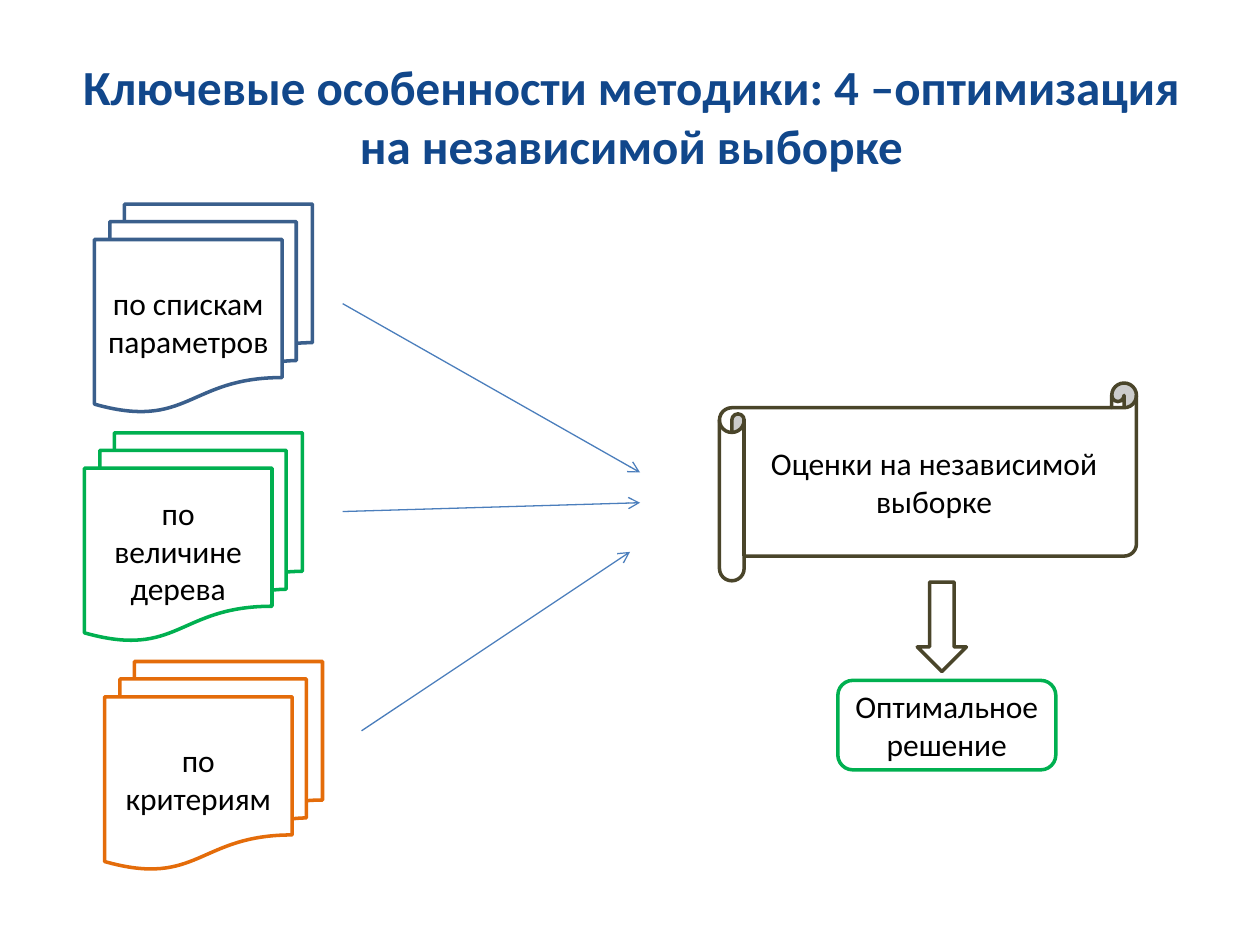
from lxml import etree
from pptx import Presentation
from pptx.dml.color import RGBColor
from pptx.enum.shapes import MSO_CONNECTOR, MSO_SHAPE
from pptx.enum.text import MSO_ANCHOR, PP_ALIGN
from pptx.oxml.ns import qn
from pptx.util import Inches, Pt

DOCUMENTS = MSO_SHAPE.FLOWCHART_MULTIDOCUMENT
SCROLL = MSO_SHAPE.HORIZONTAL_SCROLL
DOWN_ARROW = MSO_SHAPE.DOWN_ARROW
ROUNDED = MSO_SHAPE.ROUNDED_RECTANGLE
STRAIGHT = MSO_CONNECTOR.STRAIGHT
MIDDLE = MSO_ANCHOR.MIDDLE
CENTER = PP_ALIGN.CENTER

THEME = {
    "font": "Calibri",
    "title_size": Pt(28),
    "body_size": Pt(18),
    "outline": Pt(2),
    "arrow_width": Pt(0.75),
    "title": RGBColor.from_string("11478B"),
    "text": RGBColor.from_string("000000"),
    "paper": RGBColor.from_string("FFFFFF"),
    "blue": RGBColor.from_string("3A5F8C"),
    "green": RGBColor.from_string("00B050"),
    "orange": RGBColor.from_string("E46C0A"),
    "brown": RGBColor.from_string("4A452A"),
    "arrow": RGBColor.from_string("4B7EBC"),
}

deck = Presentation()
deck.slide_width, deck.slide_height = Inches(10), Inches(7.5)
page = deck.slides.add_slide(deck.slide_layouts[6])

# Grid of 100 columns by 75 rows
COLUMN = deck.slide_width // 100
ROW = deck.slide_height // 75


def on_grid(*places):
    """Turn alternating columns and rows into slide lengths."""
    return [round(n * (ROW if i % 2 else COLUMN)) for i, n in enumerate(places)]


def write(box, words, size, color, bold=False):
    frame = box.text_frame
    frame.word_wrap = True
    frame.vertical_anchor = MIDDLE
    para = frame.paragraphs[0]
    para.text = words
    para.alignment = CENTER
    font = para.font
    font.name, font.size, font.bold = THEME["font"], size, bold
    font.color.rgb = color


title = page.shapes.add_textbox(*on_grid(5.1, 2.9, 90, 12.5))
write(title, "Ключевые особенности методики: 4 –оптимизация на независимой выборке",
      THEME["title_size"], THEME["title"], bold=True)

# Left, top, width and height in grid cells
STACK = (17.3, 16.5)
FIRST_ROW, STACK_STEP = 16.2, 18.15
stacks = [
    (7.5, "blue", "по спискам параметров"),
    (6.7, "green", "по величине дерева"),
    (8.3, "orange", "по критериям"),
]
figures = [
    (DOCUMENTS, (left, FIRST_ROW + i * STACK_STEP, *STACK), color, words)
    for i, (left, color, words) in enumerate(stacks)
] + [
    (SCROLL, (57.1, 30.4, 33.1, 15.7), "brown", "Оценки на независимой выборке"),
    (DOWN_ARROW, (72.8, 46.2, 3.9, 7.1), "brown", None),
    (ROUNDED, (66.5, 54, 17.3, 7.1), "green", "Оптимальное решение"),
]
for preset, place, color, words in figures:
    figure = page.shapes.add_shape(preset, *on_grid(*place))
    figure.shadow.inherit = False
    figure.fill.solid()
    figure.fill.fore_color.rgb = THEME["paper"]
    figure.line.color.rgb = THEME[color]
    figure.line.width = THEME["outline"]
    if words:
        write(figure, words, THEME["body_size"], THEME["text"])

# Start column and row, end column and row
for ends in [(27.2, 24.1, 50.8, 37.5), (27.2, 40.6, 50.8, 39.9), (28.7, 58, 50, 43.8)]:
    arrow = page.shapes.add_connector(STRAIGHT, *on_grid(*ends))
    arrow.line.color.rgb = THEME["arrow"]
    arrow.line.width = THEME["arrow_width"]
    etree.SubElement(arrow.line._get_or_add_ln(), qn("a:tailEnd"), type="arrow")
    etree.SubElement(arrow._element.spPr, qn("a:effectLst"))

deck.save("out.pptx")
